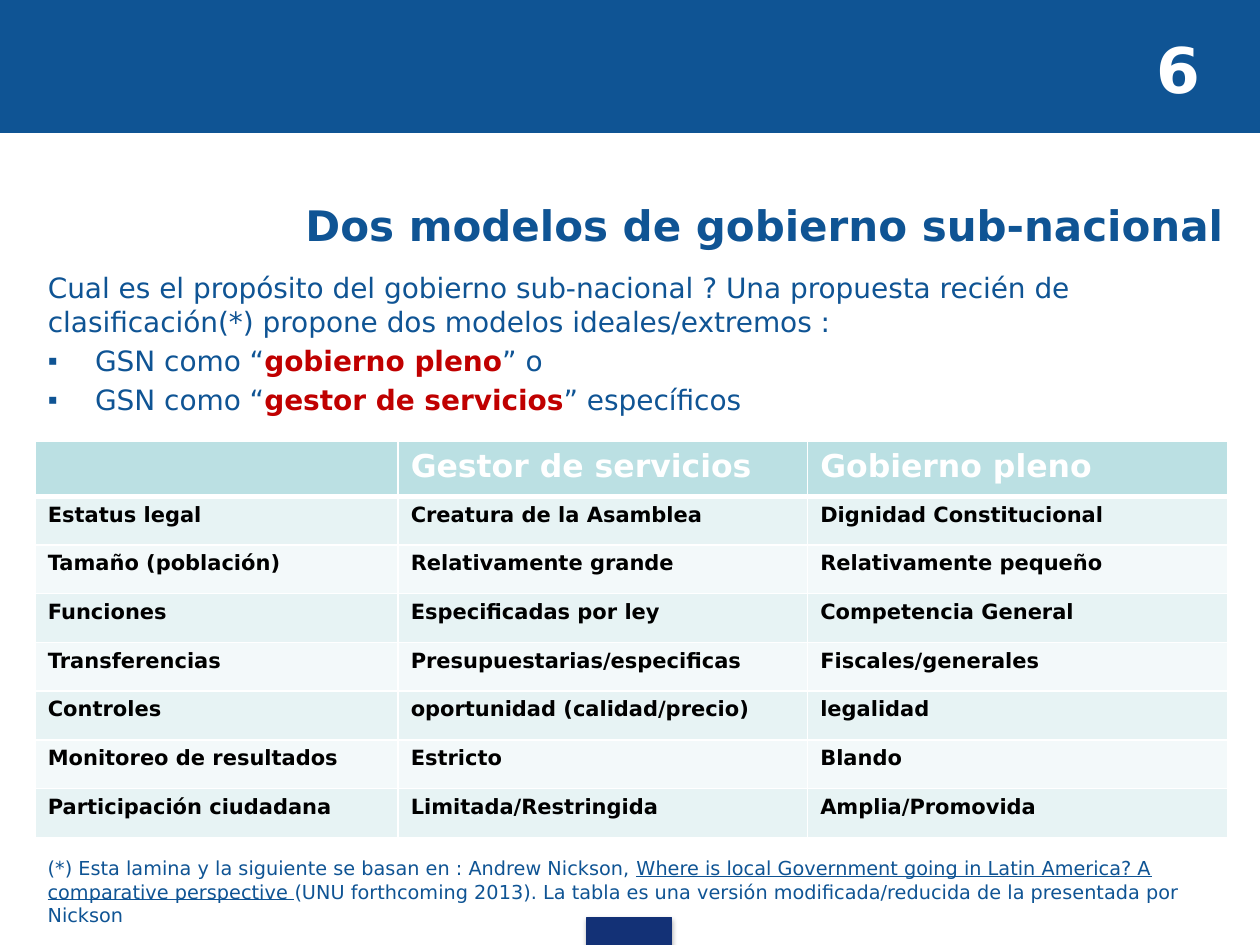
from lxml import etree
from pptx import Presentation
from pptx.dml.color import RGBColor
from pptx.enum.shapes import MSO_SHAPE as Shape
from pptx.enum.text import MSO_ANCHOR as Anchor, MSO_AUTO_SIZE as AutoSize, PP_ALIGN as Align
from pptx.oxml import parse_xml
from pptx.oxml.ns import nsdecls, qn
from pptx.util import Pt

# Content: each paragraph is a list of (text, style) runs
TITLE = "Dos modelos de gobierno sub-nacional"
PAGE_NUMBER = "6"
INTRO = [("Cual es el propósito del gobierno sub-nacional ? Una propuesta recién de "
          "clasificación(*) propone dos modelos ideales/extremos :", "plain")]
BULLETS = [
    [("GSN como “", "plain"), ("gobierno pleno", "key"), ("” o", "plain")],
    [("GSN como “", "plain"), ("gestor de servicios", "key"), ("” específicos", "plain")],
]
MODELS = [
    ("", "Gestor de servicios", "Gobierno pleno"),
    ("Estatus legal", "Creatura de la Asamblea", "Dignidad Constitucional"),
    ("Tamaño (población)", "Relativamente grande", "Relativamente pequeño"),
    ("Funciones", "Especificadas por ley", "Competencia General"),
    ("Transferencias", "Presupuestarias/especificas", "Fiscales/generales"),
    ("Controles", "oportunidad (calidad/precio)", "legalidad"),
    ("Monitoreo de resultados", "Estricto", "Blando"),
    ("Participación ciudadana", "Limitada/Restringida", "Amplia/Promovida"),
]
FOOTNOTE = [
    ("(*) Esta lamina y la siguiente se basan en : Andrew Nickson, ", "plain"),
    ("Where is local Government going in Latin America? A comparative perspective ", "cited"),
    ("(UNU forthcoming 2013). La tabla es una versión modificada/reducida de la "
     "presentada por Nickson", "plain"),
]

THEME = {
    "font": "DejaVu Sans",
    "blue": "0F5494", "navy": "133176", "red": "C00000", "white": "FFFFFF", "black": "000000",
    "header": "BBE0E3", "bands": ("E7F3F4", "F3F9FA"),
    "number": 36, "title": 24, "table_head": 18, "body": 16, "table": 12, "note": 11,
}

# Layout in points: left, top, width, height
PAGE_W, PAGE_H = 720, 540
LEFT = 20.16
BAR = (0, 0, PAGE_W, 75.6)
TAB = (335.5, 524.2, 48.2, 15.8)
TITLE_BOX = (8.6, 105.8, 697.7, 45.4)
BODY_BOX = (LEFT, 151.2, 685.4, 100.8)
NOTE_BOX = (LEFT, 486, 691.2, 48.2)
NUMBER_BOX = (653.8, 15.1, 48.2, 48.2)
COLUMNS = (207.4, 234, 239.8)
HEAD_H, ROW_H = 31.2, 27.86
TABLE_BOX = (LEFT, 252.4, sum(COLUMNS), HEAD_H + ROW_H * (len(MODELS) - 1))
HANG = 27


def color(name):
    return RGBColor.from_string(THEME.get(name, name))


def place(box, area):
    box.left, box.top, box.width, box.height = map(Pt, area)


def add_span(para, text, size, ink="blue", bold=False, underline=False):
    span = para.add_run()
    span.text = text
    font = span.font
    font.name, font.size = THEME["font"], Pt(size)
    font.bold, font.underline = bold, underline
    font.color.rgb = color(ink)


def add_spans(para, spans, size):
    for text, style in spans:
        key = style == "key"
        add_span(para, text, size, "red" if key else "blue", key, style == "cited")


def set_frame(box, anchor=Anchor.TOP):
    frame = box.text_frame
    frame.word_wrap, frame.auto_size = True, AutoSize.NONE
    frame.vertical_anchor = anchor
    return frame


def set_bullet(para, mark=None):
    props = para._p.get_or_add_pPr()
    hang = Pt(HANG) if mark else 0
    props.set("marL", str(hang))
    props.set("indent", str(-hang))
    bullet = etree.SubElement(props, qn("a:buChar" if mark else "a:buNone"))
    if mark:
        bullet.set("char", mark)


def add_block(page, area, ink):
    block = page.shapes.add_shape(Shape.RECTANGLE, *map(Pt, area))
    block.shadow.inherit = False
    block.fill.solid()
    block.fill.fore_color.rgb = color(ink)
    block.line.color.rgb = color(ink)
    block.line.width = Pt(0.75)
    return block


def add_shadow(block):
    effects = block._element.spPr.find(qn("a:effectLst"))
    effects.append(parse_xml(
        f'<a:outerShdw {nsdecls("a")} blurRad="{Pt(3.1)}" dist="{Pt(1.8)}" dir="5400000" '
        'rotWithShape="0"><a:srgbClr val="000000"><a:alpha val="35000"/></a:srgbClr></a:outerShdw>'))


def set_borders(cell, top, bottom):
    props = cell._tc.get_or_add_tcPr()
    for side, width in (("L", 1), ("R", 1), ("T", top), ("B", bottom)):
        props.append(parse_xml(
            f'<a:ln{side} {nsdecls("a")} w="{Pt(width)}"><a:solidFill>'
            f'<a:srgbClr val="{THEME["white"]}"/></a:solidFill></a:ln{side}>'))


def add_models(page):
    table = page.shapes.add_table(len(MODELS), len(COLUMNS), *map(Pt, TABLE_BOX)).table
    for column, width in zip(table.columns, COLUMNS):
        column.width = Pt(width)
    for r, texts in enumerate(MODELS):
        head = r == 0
        table.rows[r].height = Pt(HEAD_H if head else ROW_H)
        for c, text in enumerate(texts):
            cell = table.cell(r, c)
            set_borders(cell, 3 if r == 1 else 1, 3 if head else 1)
            cell.fill.solid()
            cell.fill.fore_color.rgb = color("header" if head else THEME["bands"][(r - 1) % 2])
            if text:
                add_span(cell.text_frame.paragraphs[0], text,
                         THEME["table_head" if head else "table"],
                         "white" if head else "black", bold=True)


def main():
    deck = Presentation()
    deck.slide_width, deck.slide_height = Pt(PAGE_W), Pt(PAGE_H)
    page = deck.slides.add_slide(deck.slide_layouts[1])

    # Header bar and footer tab
    add_block(page, BAR, "blue")
    add_shadow(add_block(page, TAB, "navy"))

    # Title
    title = page.shapes.title
    place(title, TITLE_BOX)
    para = set_frame(title, Anchor.MIDDLE).paragraphs[0]
    para.alignment = Align.RIGHT
    add_span(para, TITLE, THEME["title"], bold=True)

    # Introduction and bullets
    body = page.placeholders[1]
    place(body, BODY_BOX)
    frame = set_frame(body)
    for i, spans in enumerate([INTRO, *BULLETS]):
        para = frame.add_paragraph() if i else frame.paragraphs[0]
        set_bullet(para, "▪" if i else None)
        para.space_before = Pt(0.2 * THEME["body"] if i else 0)
        add_spans(para, spans, THEME["body"])

    # Comparison table
    add_models(page)

    # Footnote and page number
    note = page.shapes.add_textbox(*map(Pt, NOTE_BOX))
    add_spans(set_frame(note).paragraphs[0], FOOTNOTE, THEME["note"])
    number = page.shapes.add_textbox(*map(Pt, NUMBER_BOX))
    add_span(set_frame(number, Anchor.MIDDLE).paragraphs[0], PAGE_NUMBER,
             THEME["number"], "white", bold=True)

    deck.save("out.pptx")


if __name__ == "__main__":
    main()
